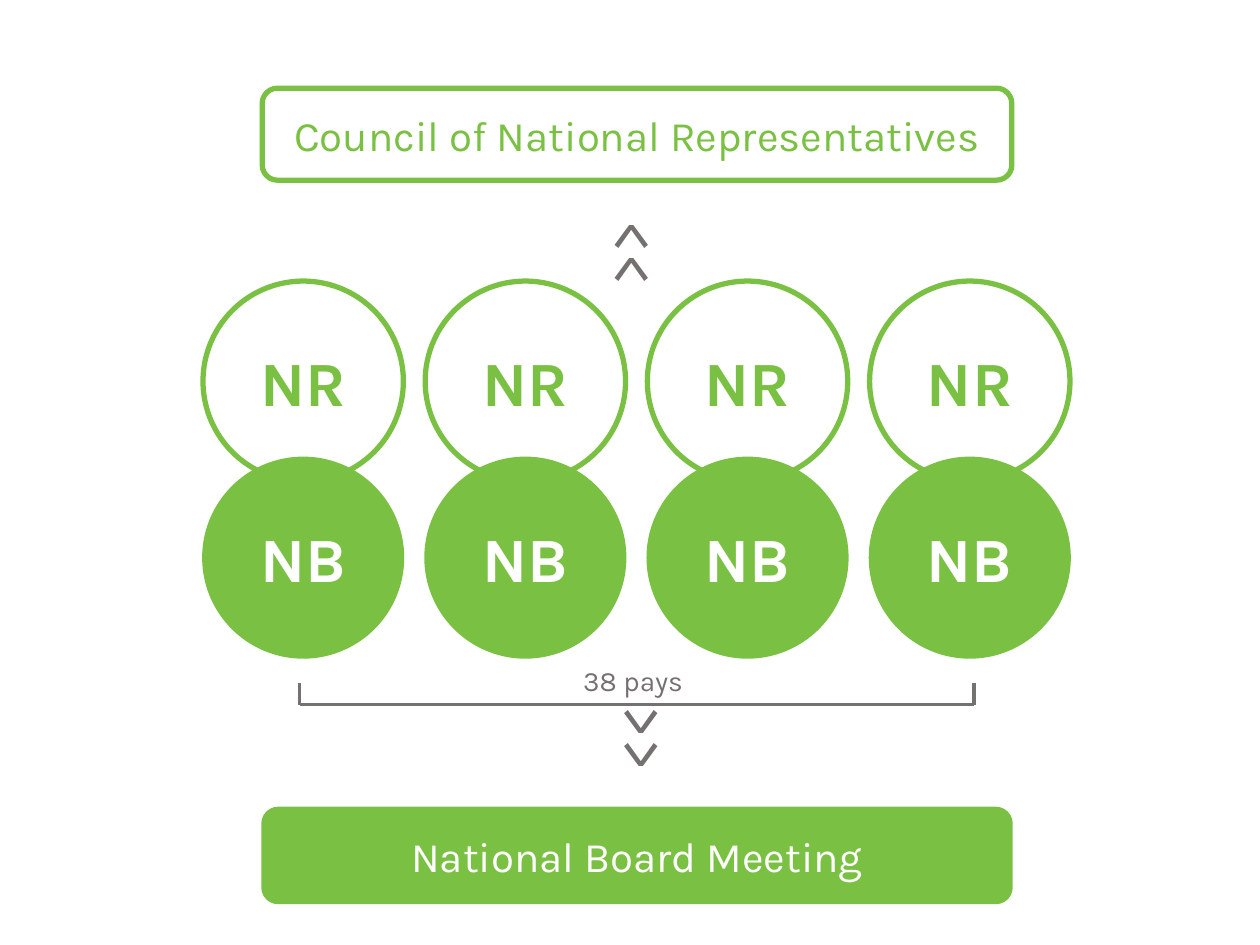
from lxml.etree import SubElement
from pptx import Presentation
from pptx.dml.color import RGBColor
from pptx.enum.shapes import MSO_CONNECTOR, MSO_SHAPE
from pptx.enum.text import MSO_ANCHOR, PP_ALIGN
from pptx.oxml.ns import qn
from pptx.util import Pt

GREEN, GREY, WHITE = "7AC143", "767171", "FFFFFF"


def rgb(color):
    return RGBColor.from_string(color)


def set_text(tf, text, size, color, bold=False, align=PP_ALIGN.LEFT):
    p = tf.paragraphs[0]
    p.text = text
    p.alignment = align
    p.font.name = "Karla"
    p.font.size = Pt(size)
    p.font.bold = bold
    p.font.color.rgb = rgb(color)


def add_badge(slide, kind, box, text, size, fill, color, line_width, bold=False):
    sp = slide.shapes.add_shape(kind, *map(Pt, box))
    sp.shadow.inherit = False
    if fill:
        sp.fill.solid()
        sp.fill.fore_color.rgb = rgb(fill)
    else:
        sp.fill.background()
    sp.line.color.rgb = rgb(GREEN)
    sp.line.width = Pt(line_width)
    tf = sp.text_frame
    tf.word_wrap = True
    tf.vertical_anchor = MSO_ANCHOR.MIDDLE
    set_text(tf, text, size, color, bold, PP_ALIGN.CENTER)


def add_label(slide, box, text, size, rotation=0):
    sp = slide.shapes.add_textbox(*map(Pt, box))
    sp.rotation = rotation
    sp.text_frame.word_wrap = True
    set_text(sp.text_frame, text, size, GREY)


def add_line(slide, x1, y1, x2, y2):
    line = slide.shapes.add_connector(MSO_CONNECTOR.STRAIGHT, *map(Pt, (x1, y1, x2, y2)))
    line.line.color.rgb = rgb(GREY)
    line.line.width = Pt(2)
    SubElement(line._element.spPr, qn("a:effectLst"))


def add_circles(slide, left, top, width, height, count=4, size=114.5):
    """Columns of an NB circle under an overlapping NR circle."""
    pitch = (width - size) / (count - 1)
    for i in range(count):
        x = left + i * pitch
        add_badge(slide, MSO_SHAPE.OVAL, (x, top + height - size, size, size),
                  "NB", 36, GREEN, WHITE, 1, bold=True)
        add_badge(slide, MSO_SHAPE.OVAL, (x, top, size, size),
                  "NR", 36, None, GREEN, 3, bold=True)


def add_bracket(slide, left, top, width, height):
    """Bracket under the circles, open at the top."""
    right, bottom = left + width, top + height
    add_line(slide, left, bottom, right, bottom)
    for x in (left, right):
        add_line(slide, x, bottom, x, top)


def main():
    prs = Presentation()
    prs.slide_width, prs.slide_height = Pt(720), Pt(540)
    slide = prs.slides.add_slide(prs.slide_layouts[6])

    # National representatives and boards
    add_circles(slide, 116, 160.6, 495.4, 215.3)

    # Country count
    add_bracket(slide, 171.2, 390.2, 385.4, 12.5)
    add_label(slide, (326.2, 375.8, 100.8, 26.6), "38 pays", 16)

    # Chevrons pointing down, then up
    add_label(slide, (334.1, 393.1, 58.3, 51.1), "<<", 36, 270)
    add_label(slide, (334.8, 122.4, 58.3, 51.1), "<<", 36, 90)

    # Meeting bodies
    add_badge(slide, MSO_SHAPE.ROUNDED_RECTANGLE, (149.8, 461.5, 428.4, 54.7),
              "National Board Meeting", 24, GREEN, WHITE, 1)
    add_badge(slide, MSO_SHAPE.ROUNDED_RECTANGLE, (149.8, 50.4, 428.4, 52.6),
              "Council of National Representatives", 24, WHITE, GREEN, 3)

    prs.save("out.pptx")


if __name__ == "__main__":
    main()
